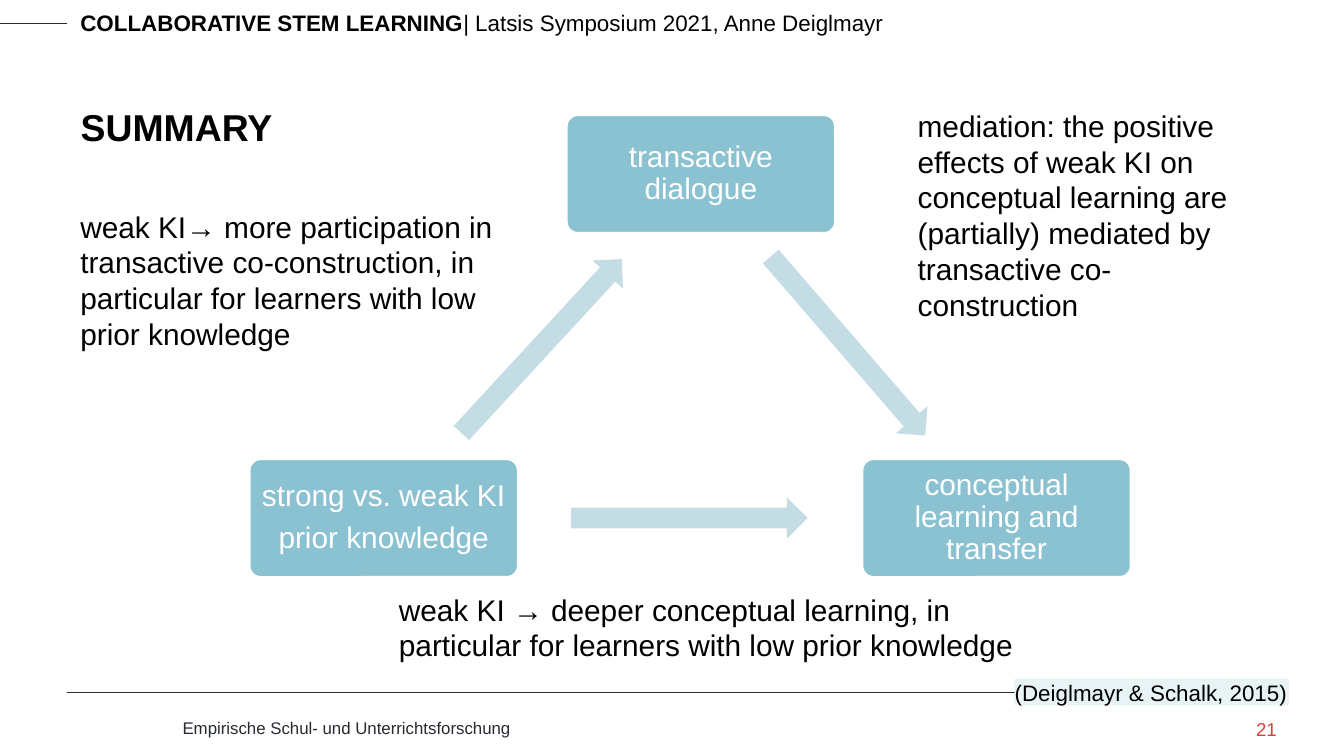
from dataclasses import dataclass

from lxml.etree import SubElement
from pptx import Presentation
from pptx.dml.color import RGBColor as Rgb
from pptx.enum.shapes import MSO_CONNECTOR as Conn, MSO_SHAPE as Kind
from pptx.enum.text import MSO_ANCHOR as Anchor, MSO_AUTO_SIZE as Fit, PP_ALIGN as Align
from pptx.oxml.ns import qn
from pptx.util import Pt

PX = 9144  # 100 px to the inch


@dataclass(frozen=True)
class Theme:
    font: str = "Arial"
    ink: str = "000000"
    dark: str = "262A31"
    red: str = "D8413E"
    white: str = "FFFFFF"
    node: str = "8AC2D1"
    arrow: str = "C4DDE5"
    pale: str = "E8F3F6"
    title: int = 20
    body: int = 16
    small: int = 12
    page: int = 10
    foot: int = 9


T = Theme()

TITLE = "SUMMARY"
HEAD = [("COLLABORATIVE STEM LEARNING", True),
        ("| Latsis Symposium 2021, Anne Deiglmayr", False)]
FOOT = "Empirische Schul- und Unterrichtsforschung"
PAGE = "21"
CITE = "(Deiglmayr & Schalk, 2015)"

# left, top, lines of text
NODES = [
    (421, 85, ["transactive dialogue"]),
    (641, 341, ["conceptual learning and transfer"]),
    (185, 341, ["strong vs. weak KI", "prior knowledge"]),
]
NODE_W, NODE_H = 201, 89

# left, top, turn in degrees
ARROWS = [(543, 242, 49.2), (425, 370, 0), (315, 242, 312.7)]
ARROW_W, ARROW_H = 176, 31

# box, text
NOTES = [
    ((287, 435, 507, 64), "weak KI → deeper conceptual learning, in particular "
                          "for learners with low prior knowledge"),
    ((673, 75, 277, 172), "mediation: the positive effects of weak KI on conceptual "
                          "learning are (partially) mediated by transactive co-construction"),
    ((50, 150, 396, 118), "weak KI→ more participation in transactive co-construction, "
                          "in particular for learners with low\nprior knowledge"),
]

# left, right, height on the slide
RULES = [(0, 50, 17), (50, 950, 515)]


def emu(*px):
    return [n * PX for n in px]


def write(shape, paras, size=T.body, color=T.ink, bold=False, align=Align.LEFT,
          anchor=Anchor.TOP, inset=(10, 5), wrap=True, grow=False, lead=None, after=None):
    """Fill a shape with paragraphs; each is a string or a list of (text, bold)."""
    frame = shape.text_frame
    frame.word_wrap = wrap
    frame.auto_size = Fit.SHAPE_TO_FIT_TEXT if grow else Fit.NONE
    frame.vertical_anchor = anchor
    frame.margin_left = frame.margin_right = inset[0] * PX
    frame.margin_top = frame.margin_bottom = inset[1] * PX
    for i, para in enumerate(paras):
        p = frame.paragraphs[0] if i == 0 else frame.add_paragraph()
        p.alignment, p.line_spacing, p.space_after = align, lead, after
        for text, strong in [(para, bold)] if isinstance(para, str) else para:
            for j, part in enumerate(text.split("\n")):
                if j:
                    p.add_line_break()
                run = p.add_run()
                run.text = part
                font = run.font
                font.name, font.size, font.bold = T.font, Pt(size), strong
                font.color.rgb = Rgb.from_string(color)


def shape(slide, kind, box, fill):
    item = slide.shapes.add_shape(kind, *emu(*box))
    item.shadow.inherit = False
    item.fill.solid()
    item.fill.fore_color.rgb = Rgb.from_string(fill)
    item.line.fill.background()
    return item


def label(slide, box, paras, **form):
    write(slide.shapes.add_textbox(*emu(*box)), paras, **form)


def rule(slide, left, right, y):
    line = slide.shapes.add_connector(Conn.STRAIGHT, *emu(left, y, right, y))
    line.line.color.rgb = Rgb.from_string(T.dark)
    line.line.width = Pt(0.25)
    SubElement(line._element.spPr, qn("a:effectLst"))


def main():
    deck = Presentation()
    deck.slide_width = 1000 * PX
    deck.slide_height = deck.slide_width * 9 // 16
    slide = deck.slides.add_slide(deck.slide_layouts[5])

    for spot in RULES:
        rule(slide, *spot)
    label(slide, (50, 2, 766, 30), [HEAD], size=T.small, grow=True)
    label(slide, (126, 529, 742, 25), [FOOT], size=T.foot, color=T.dark, grow=True)
    label(slide, (869, 534, 81, 22), [PAGE], size=T.page, color=T.red,
          align=Align.RIGHT, inset=(0, 0))

    title = slide.shapes.title
    title.left, title.top, title.width, title.height = emu(50, 33, 901, 83)
    write(title, [TITLE], size=T.title, bold=True, anchor=Anchor.BOTTOM)

    for left, top, lines in NODES:
        node = shape(slide, Kind.ROUNDED_RECTANGLE, (left, top, NODE_W, NODE_H), T.node)
        node.adjustments[0] = 0.1
        node.line.color.rgb = Rgb.from_string(T.white)
        node.line.width = Pt(2)
        write(node, lines, color=T.white, align=Align.CENTER, anchor=Anchor.MIDDLE,
              inset=(6, 7), lead=0.9, after=Pt(5.5))

    for left, top, turn in ARROWS:
        arrow = shape(slide, Kind.RIGHT_ARROW, (left, top, ARROW_W, ARROW_H), T.arrow)
        arrow.rotation = turn

    for box, text in NOTES:
        label(slide, box, [text], grow=True)

    cite = shape(slide, Kind.RECTANGLE, (755, 505, 204, 20), T.pale)
    write(cite, [CITE], size=T.small, inset=(0, 0), wrap=False, grow=True)

    deck.save("out.pptx")


if __name__ == "__main__":
    main()
